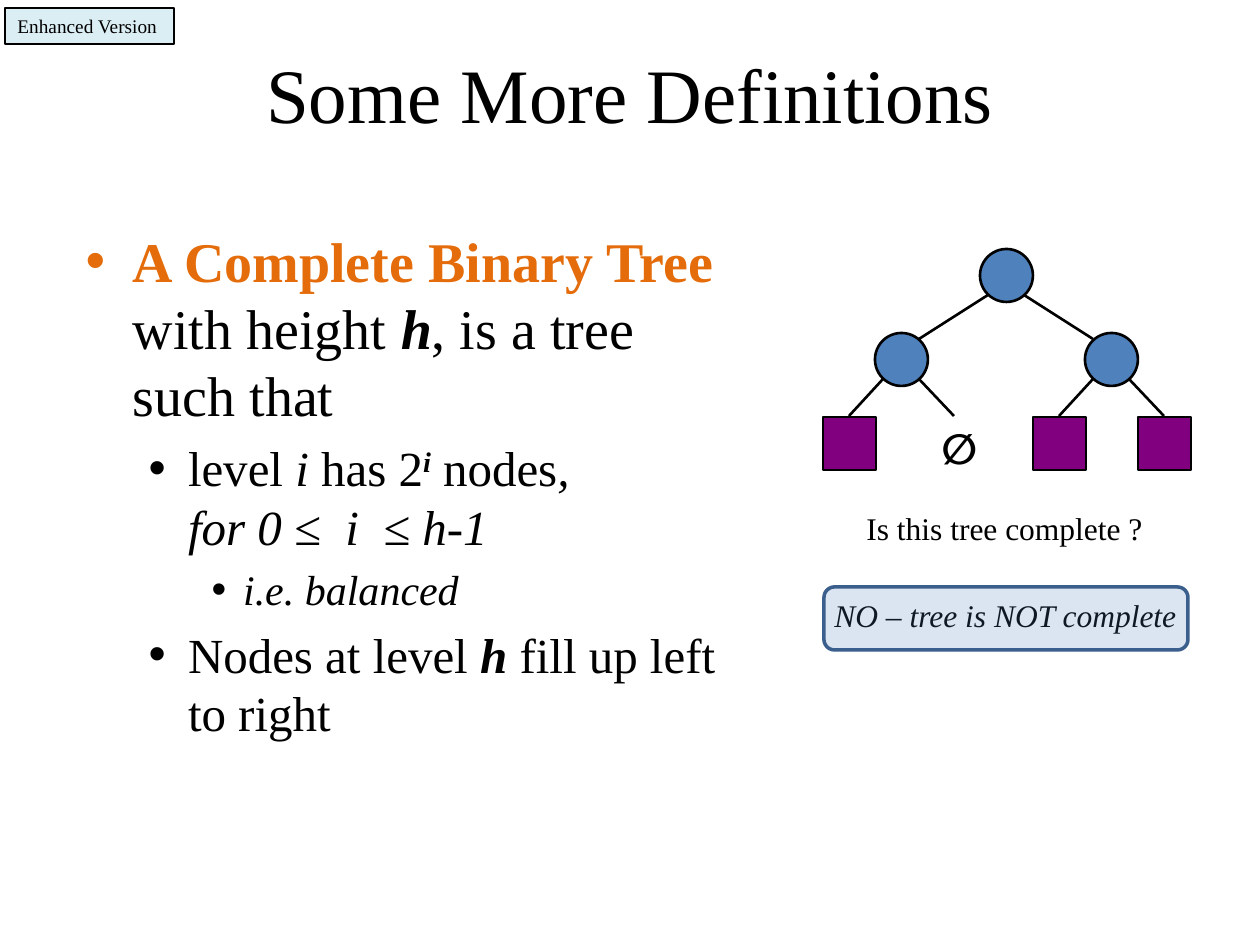
from lxml.etree import SubElement
from pptx import Presentation
from pptx.dml.color import RGBColor
from pptx.enum.shapes import MSO_CONNECTOR, MSO_SHAPE
from pptx.enum.text import MSO_ANCHOR, MSO_AUTO_SIZE, PP_ALIGN
from pptx.oxml.ns import qn
from pptx.util import Emu, Pt

SERIF = "Times New Roman"
BOLD_ITALIC = {"bold": True, "italic": True}
ITALIC = {"italic": True}
NODE = 53
HALF = NODE // 2


def px(length):
    return Emu(length * 914400 // 126)


def color(value):
    return RGBColor.from_string(value)


class SlideBuilder:
    def __init__(self, slide, font=SERIF, ink="000000"):
        self.slide, self.font, self.ink = slide, font, ink

    def add_text(self, paragraph, text, **style):
        values = {"name": self.font, "color": self.ink, "bold": False, "italic": False} | style
        run = paragraph.add_run()
        run.text = text
        run.font.color.rgb = color(values.pop("color"))
        baseline = values.pop("baseline", None)
        for attribute, value in values.items():
            setattr(run.font, attribute, value)
        if baseline:
            run._r.get_or_add_rPr().set("baseline", str(baseline * 1000))

    def place(self, shape, box):
        for attribute, length in zip(("left", "top", "width", "height"), box):
            setattr(shape, attribute, px(length))

    def title(self, box, text, size):
        heading = self.slide.shapes.title
        self.place(heading, box)
        heading.text_frame.vertical_anchor = MSO_ANCHOR.MIDDLE
        paragraph = heading.text_frame.paragraphs[0]
        paragraph.alignment = PP_ALIGN.CENTER
        self.add_text(paragraph, text, size=Pt(size))

    def bullets(self, box, items):
        body = self.slide.placeholders[1]
        self.place(body, box)
        frame = body.text_frame
        frame.auto_size = MSO_AUTO_SIZE.NONE
        for index, (level, size, runs) in enumerate(items):
            paragraph = frame.add_paragraph() if index else frame.paragraphs[0]
            paragraph.level = level
            SubElement(paragraph._p.get_or_add_pPr(), qn("a:buChar"), char="•")
            for text, style in runs:
                if text == "\n":
                    paragraph.add_line_break()
                else:
                    self.add_text(paragraph, text, size=Pt(size), **style)

    def label(self, box, text, size, wrap=False, **style):
        caption = self.slide.shapes.add_textbox(*map(px, box))
        self.caption(caption, text, size, wrap, **style)

    def caption(self, shape, text, size, wrap=False, **style):
        frame = shape.text_frame
        settings = {"word_wrap": wrap, "auto_size": MSO_AUTO_SIZE.SHAPE_TO_FIT_TEXT,
                    "vertical_anchor": MSO_ANCHOR.TOP}
        for attribute, value in settings.items():
            setattr(frame, attribute, value)
        paragraph = frame.paragraphs[0]
        paragraph.alignment = PP_ALIGN.LEFT
        self.add_text(paragraph, text, size=Pt(size), **style)

    def shape(self, kind, box, fill, line="000000", weight=1.5, opacity=None):
        shape = self.slide.shapes.add_shape(kind, *map(px, box))
        shape.shadow.inherit = False
        shape.fill.solid()
        shape.fill.fore_color.rgb = color(fill)
        shape.line.color.rgb = color(line)
        shape.line.width = Pt(weight)
        if opacity:
            tint = shape._element.spPr.find(f"{qn('a:solidFill')}/{qn('a:srgbClr')}")
            SubElement(tint, qn("a:alpha"), val=str(opacity * 1000))
        return shape

    def edge(self, start, end):
        edge = self.slide.shapes.add_connector(MSO_CONNECTOR.STRAIGHT, *map(px, start + end))
        edge.line.color.rgb = color(self.ink)
        edge.line.width = Pt(1.5)
        SubElement(edge._element.spPr, qn("a:effectLst"))


def corner(column, level):
    return 823 + column * 105 // 2, 249 + level * 84


def draw_tree(builder):
    inner_nodes = [(3, 0), (5, 1), (1, 1)]
    leaves = [(0, 2), (4, 2), (6, 2)]
    for kind, fill, nodes in ((MSO_SHAPE.OVAL, "4F81BD", inner_nodes),
                              (MSO_SHAPE.RECTANGLE, "800080", leaves)):
        for node in nodes:
            builder.shape(kind, (*corner(*node), NODE, NODE), fill)
    for column, level in inner_nodes:
        parent_left, parent_top = corner(column, level)
        for side in (-1, 1):
            spread = 1 if level else 2
            child_left, child_top = corner(column + side * spread, level + 1)
            start = (parent_left + HALF + side * 18, parent_top + HALF + 20)
            if level:
                end = (child_left + HALF, child_top - 1)
            else:
                end = (child_left + HALF - side * 18, child_top + HALF - 20)
            builder.edge(start, end)


def main():
    presentation = Presentation()
    presentation.slide_width, presentation.slide_height = px(1260), px(945)
    builder = SlideBuilder(presentation.slides.add_slide(presentation.slide_layouts[1]))

    builder.title((63, 38, 1134, 110), "Some More Definitions", 44)
    builder.bullets((73, 220, 672, 662), [
        (0, 32, [("A Complete Binary Tree ", {"bold": True, "color": "E46C0A"}),
                 ("with height ", {}), ("h", BOLD_ITALIC), (", is a tree such that", {})]),
        (1, 28, [("level ", {}), ("i", ITALIC), (" has 2", {}),
                 ("i", BOLD_ITALIC | {"baseline": 30}), (" nodes", {}), (", ", ITALIC),
                 ("\n", {}), ("for 0 ≤  i  ≤ h-1", ITALIC)]),
        (2, 24, [("i.e. balanced", ITALIC)]),
        (1, 28, [("Nodes at level ", {}), ("h", BOLD_ITALIC), (" fill up left to right", {})]),
    ])
    builder.label((822, 590, 370, 50), "NO – tree is NOT complete", 18, italic=True)
    version = builder.shape(MSO_SHAPE.RECTANGLE, (5, 8, 169, 36), "DBEEF4", weight=0.75)
    builder.caption(version, "Enhanced Version", 11)

    draw_tree(builder)
    builder.label((854, 503, 305, 50), "Is this tree complete ?", 18)
    builder.label((929, 416, 63, 64), "∅", 24, wrap=True, name="Calibri", bold=True)
    builder.shape(MSO_SHAPE.ROUNDED_RECTANGLE, (824, 587, 364, 63), "4F81BD",
                  line="3A5F8C", weight=2, opacity=20)

    presentation.save("out.pptx")


if __name__ == "__main__":
    main()
